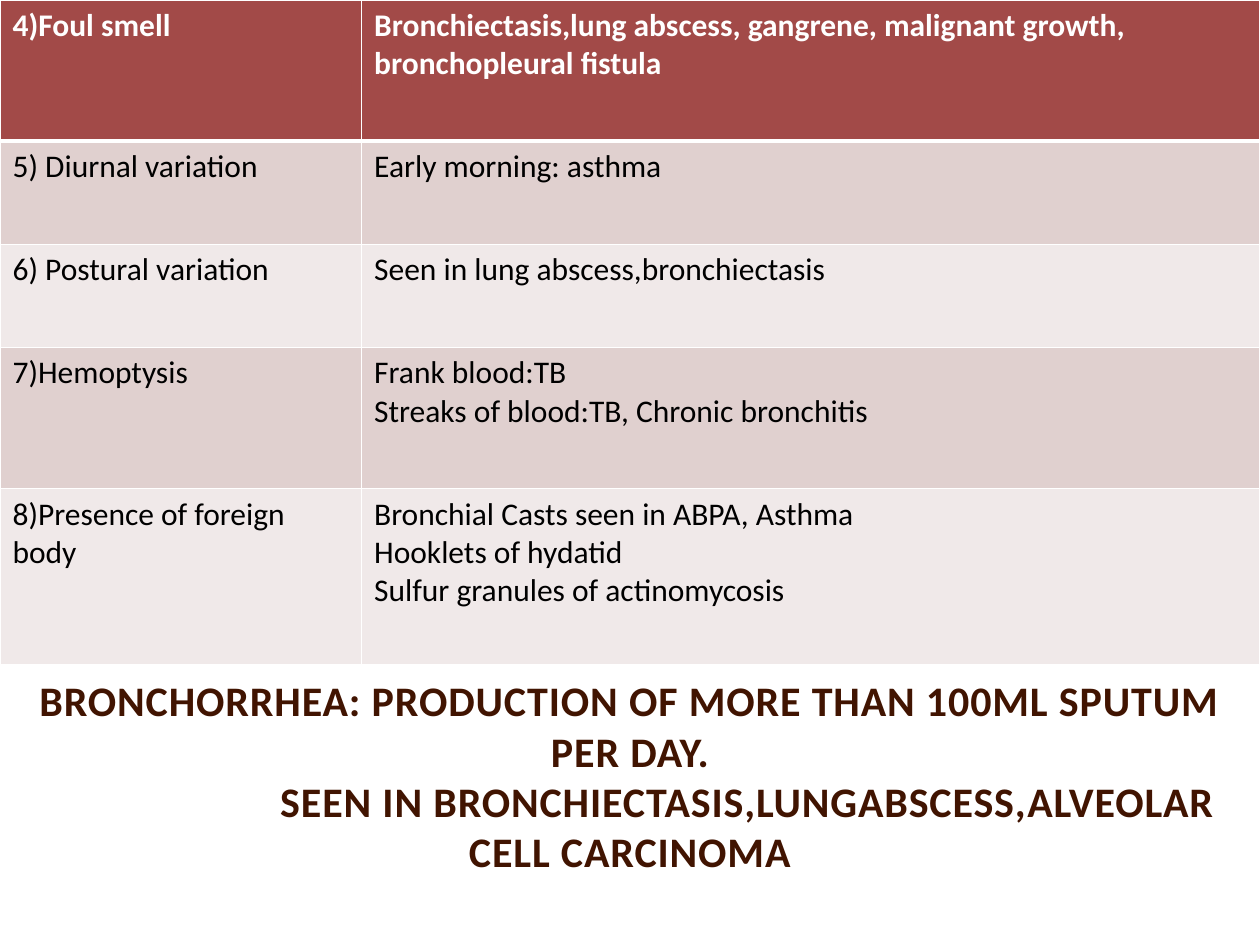
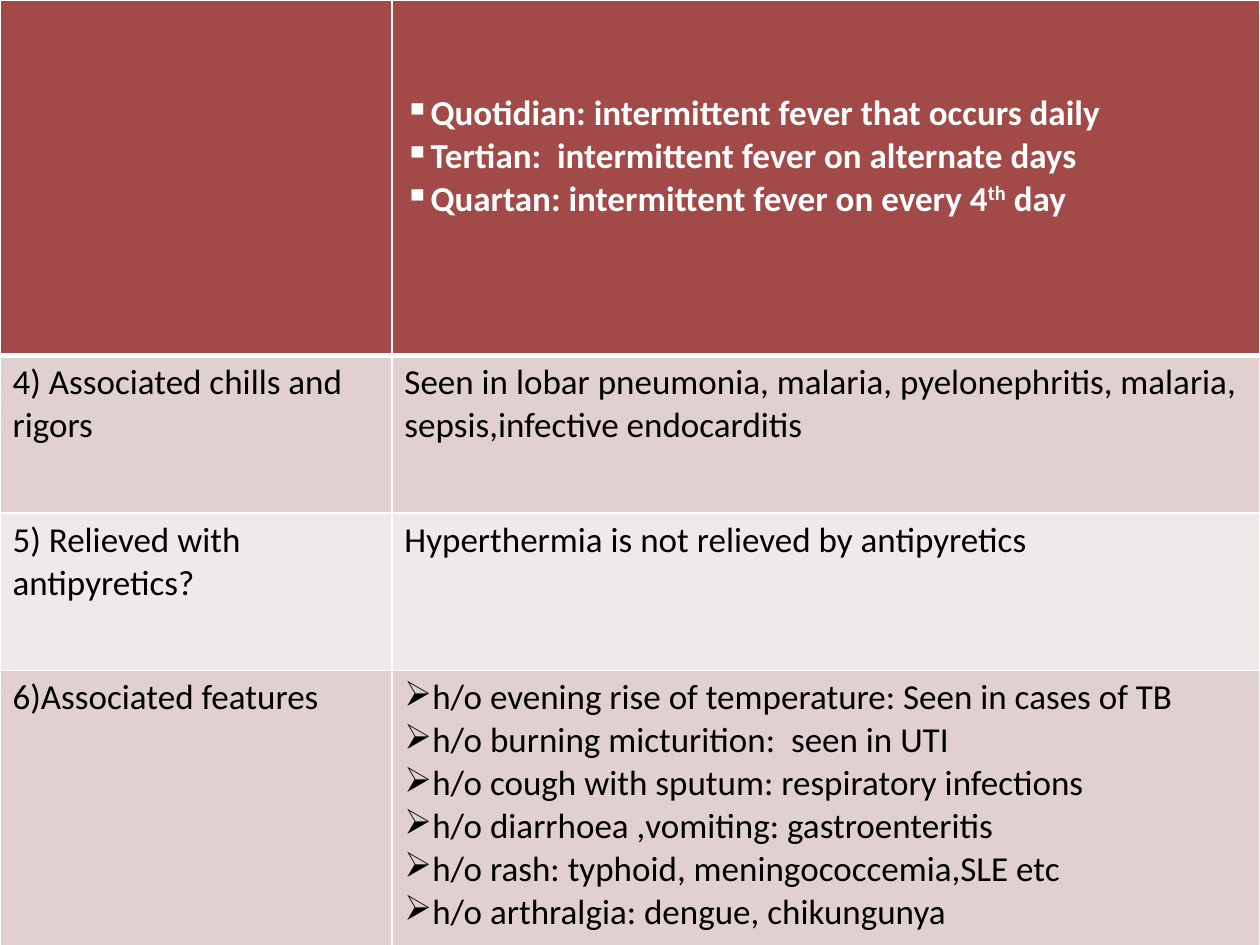
import dataclasses

import lxml.etree
import pptx
import pptx.dml.color
import pptx.enum.text
import pptx.oxml.ns
import pptx.util

Inches = pptx.util.Inches
Pt = pptx.util.Pt
RGBColor = pptx.dml.color.RGBColor
qn = pptx.oxml.ns.qn

WHITE = RGBColor(0xFF, 0xFF, 0xFF)
BLACK = RGBColor(0x00, 0x00, 0x00)
BROWN = RGBColor(0x41, 0x14, 0x01)
RED = RGBColor(0xA2, 0x4A, 0x48)
BANDS = (RGBColor(0xE0, 0xD0, 0xCF), RGBColor(0xF0, 0xE9, 0xE9))
FONT = "Calibri"
RAISE = "^"


@dataclasses.dataclass
class Row:
    height: float
    label: str
    lines: list[str]
    bullet: str = ""
    top: float = 0.05


@dataclasses.dataclass
class Grid:
    widths: tuple[float, float]
    size: int
    rows: list[Row]


SPUTUM = Grid((2.87, 7.13), 18, [
    Row(1.12, "4)Foul smell",
        ["Bronchiectasis,lung abscess, gangrene, malignant growth, bronchopleural fistula"]),
    Row(0.82, "5) Diurnal variation", ["Early morning: asthma"]),
    Row(0.82, "6) Postural variation", ["Seen in lung abscess,bronchiectasis"]),
    Row(1.12, "7)Hemoptysis",
        ["Frank blood:TB", "Streaks of blood:TB, Chronic bronchitis"]),
    Row(1.4, "8)Presence of foreign body",
        ["Bronchial Casts seen in ABPA, Asthma", "Hooklets of hydatid",
         "Sulfur granules of actinomycosis"]),
])

FEVER = Grid((3.11, 6.89), 20, [
    Row(2.82, "",
        ["Quotidian: intermittent fever that occurs daily",
         "Tertian:  intermittent fever on alternate days",
         "Quartan: intermittent fever on every 4^th^ day"], "▪", 0.73),
    Row(1.25, "4) Associated chills and rigors",
        ["Seen in lobar pneumonia, malaria, pyelonephritis, malaria, "
         "sepsis,infective endocarditis"]),
    Row(1.25, "5) Relieved with antipyretics?",
        ["Hyperthermia is not relieved by antipyretics"]),
    Row(2.48, "6)Associated features",
        ["h/o evening rise of temperature: Seen in cases of TB",
         "h/o burning micturition:  seen in UTI",
         "h/o cough with sputum: respiratory infections",
         "h/o diarrhoea ,vomiting: gastroenteritis",
         "h/o rash: typhoid, meningococcemia,SLE etc",
         "h/o arthralgia: dengue, chikungunya"], "➢"),
])

CLAIM = [
    "BRONCHORRHEA: PRODUCTION OF MORE THAN 100ML SPUTUM PER DAY.",
    "SEEN IN BRONCHIECTASIS,LUNGABSCESS,ALVEOLAR CELL CARCINOMA",
]


def write(frame, lines: list[str], *, size: int, color: RGBColor, bold: bool = False,
          align=pptx.enum.text.PP_ALIGN.LEFT, bullet: str = "", track: int = 0) -> None:
    for i, line in enumerate(lines):
        para = frame.paragraphs[0] if i == 0 else frame.add_paragraph()
        para.alignment = align
        if bullet:
            props = para._p.get_or_add_pPr()
            lxml.etree.SubElement(props, qn("a:buChar")).set("char", bullet)
        for k, part in enumerate(line.split(RAISE)):
            run = para.add_run()
            run.text = part
            font = run.font
            font.name, font.size, font.bold = FONT, Pt(size), bold
            font.color.rgb = color
            marks = run._r.get_or_add_rPr()
            if k % 2:
                marks.set("baseline", "30000")
            if track:
                marks.set("spc", str(track))


def edge(cell, sides: dict[str, int]) -> None:
    props = cell._tc.get_or_add_tcPr()
    for side, width in sides.items():
        line = lxml.etree.SubElement(props, qn(f"a:ln{side}"), w=str(Pt(width)))
        fill = lxml.etree.SubElement(line, qn("a:solidFill"))
        lxml.etree.SubElement(fill, qn("a:srgbClr"), val=str(WHITE))


def draw_grid(slide, grid: Grid) -> None:
    high = sum(row.height for row in grid.rows)
    table = slide.shapes.add_table(
        len(grid.rows), len(grid.widths), 0, 0,
        Inches(sum(grid.widths)), Inches(high)).table
    for col, width in zip(table.columns, grid.widths):
        col.width = Inches(width)
    for i, row in enumerate(grid.rows):
        table.rows[i].height = Inches(row.height)
        head = i == 0
        for j, lines in enumerate(([row.label], row.lines)):
            cell = table.cell(i, j)
            edge(cell, {"L": 1, "R": 1, "T": 1, "B": 3} if head
                 else {"L": 1, "R": 1, "T": 3 if i == 1 else 1, "B": 1})
            cell.fill.solid()
            cell.fill.fore_color.rgb = RED if head else BANDS[(i - 1) % 2]
            cell.margin_top = Inches(row.top)
            if any(lines):
                write(cell.text_frame, lines, size=grid.size,
                      color=WHITE if head else BLACK, bold=head,
                      bullet=row.bullet if j else "")


def draw_claim(slide) -> None:
    title = slide.shapes.title
    title.left, title.top = Inches(0), Inches(5.09)
    title.width, title.height = Inches(10), Inches(2.13)
    frame = title.text_frame
    frame.auto_size = pptx.enum.text.MSO_AUTO_SIZE.NONE
    frame.vertical_anchor = pptx.enum.text.MSO_ANCHOR.MIDDLE
    write(frame, CLAIM, size=24, color=BROWN, bold=True,
          align=pptx.enum.text.PP_ALIGN.CENTER, track=50)
    props = frame.paragraphs[1]._p.get_or_add_pPr()
    props.set("marL", "0")
    props.set("indent", str(Inches(1.87)))


def main() -> None:
    deck = pptx.Presentation()
    deck.slide_width, deck.slide_height = Inches(10), Inches(7.5)
    first = deck.slides.add_slide(deck.slide_layouts[5])
    draw_claim(first)
    draw_grid(first, SPUTUM)
    draw_grid(deck.slides.add_slide(deck.slide_layouts[6]), FEVER)
    deck.save("out.pptx")


if __name__ == "__main__":
    main()
